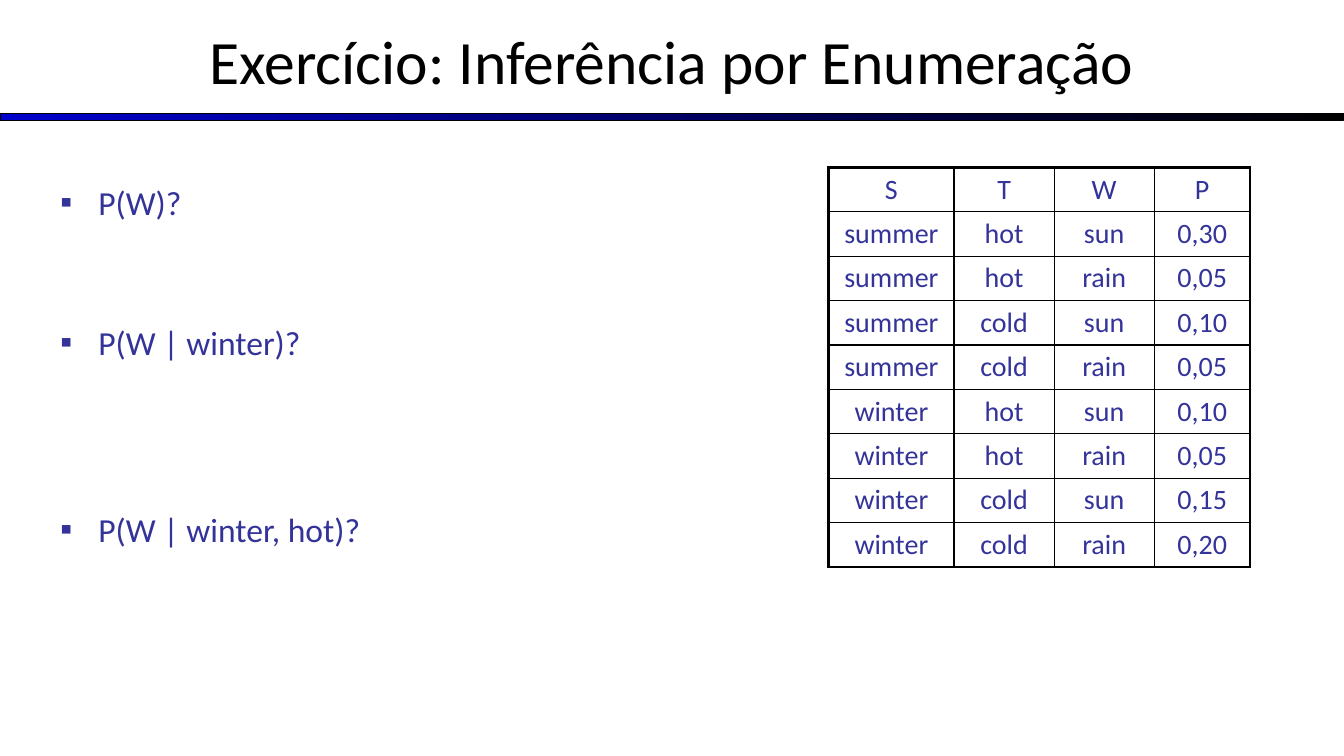
from dataclasses import dataclass

from lxml.etree import SubElement
from pptx import Presentation
from pptx.dml.color import RGBColor
from pptx.enum.shapes import MSO_SHAPE as Preset
from pptx.enum.text import MSO_ANCHOR as Anchor, MSO_AUTO_SIZE as AutoSize, PP_ALIGN as Align
from pptx.oxml.ns import qn
from pptx.util import Pt


@dataclass(frozen=True)
class Theme:
    font: str = "Calibri"
    ink: str = "000000"
    text: str = "333399"
    bar_start: str = "0000CC"
    title_size: int = 44
    list_size: int = 24
    table_size: int = 20
    thin: float = 1
    thick: float = 2.25


THEME = Theme()
QUESTIONS = [("P(W)?", 0), ("P(W | winter)?", 71.4), ("P(W | winter, hot)?", 105)]
COLUMN_WIDTHS = [89.5, 71.5, 71.5, 68.5]
ROW_HEIGHT = 31.2
DISTRIBUTION = [
    ("S", "T", "W", "P"),
    ("summer", "hot", "sun", "0,30"),
    ("summer", "hot", "rain", "0,05"),
    ("summer", "cold", "sun", "0,10"),
    ("summer", "cold", "rain", "0,05"),
    ("winter", "hot", "sun", "0,10"),
    ("winter", "hot", "rain", "0,05"),
    ("winter", "cold", "sun", "0,15"),
    ("winter", "cold", "rain", "0,20"),
]


def place(shape, left, top, width, height):
    shape.left, shape.top = Pt(left), Pt(top)
    shape.width, shape.height = Pt(width), Pt(height)


def style_para(para, size, color, align):
    para.alignment = align
    for span in para.runs:
        span.font.name = THEME.font
        span.font.size = Pt(size)
        span.font.color.rgb = RGBColor.from_string(color)


def add_title(page, text):
    title = page.shapes.title
    place(title, 0, -2, 960, 90)
    frame = title.text_frame
    frame.text = text
    frame.vertical_anchor = Anchor.MIDDLE
    frame.auto_size = AutoSize.NONE
    style_para(frame.paragraphs[0], THEME.title_size, THEME.ink, Align.CENTER)


def add_bar(page):
    bar = page.shapes.add_shape(Preset.RECTANGLE, 0, Pt(81), Pt(960), Pt(5))
    bar.shadow.inherit = False
    bar.fill.gradient()
    bar.fill.gradient_angle = 0
    for stop, color in zip(bar.fill.gradient_stops, (THEME.bar_start, THEME.ink)):
        stop.color.rgb = RGBColor.from_string(color)
    bar.line.color.rgb = RGBColor.from_string(THEME.ink)
    bar.line.width = Pt(0.75)


def add_bullet(para):
    props = para._p.get_or_add_pPr()
    props.set("marL", str(Pt(27)))
    props.set("indent", str(Pt(-27)))
    color = SubElement(props, qn("a:buClr"))
    SubElement(color, qn("a:srgbClr"), val=THEME.text)
    SubElement(props, qn("a:buFont"), typeface=THEME.font)
    SubElement(props, qn("a:buChar"), char="▪")


def add_questions(page):
    body = page.placeholders[1]
    place(body, 36, 126, 318, 356.5)
    frame = body.text_frame
    frame.text = "\n".join(text for text, gap in QUESTIONS)
    frame.auto_size = AutoSize.NONE
    for para, (text, gap) in zip(frame.paragraphs, QUESTIONS):
        para.space_before = Pt(gap)
        add_bullet(para)
        style_para(para, THEME.list_size, THEME.text, Align.LEFT)


def set_borders(cell, outer_sides):
    props = cell._tc.get_or_add_tcPr()
    for side in "LRTB":
        width = THEME.thick if side in outer_sides else THEME.thin
        line = SubElement(props, qn(f"a:ln{side}"), w=str(Pt(width)))
        fill = SubElement(line, qn("a:solidFill"))
        SubElement(fill, qn("a:srgbClr"), val=THEME.ink)


def add_distribution(page):
    row_count, column_count = len(DISTRIBUTION), len(COLUMN_WIDTHS)
    table = page.shapes.add_table(
        row_count, column_count, Pt(592), Pt(119.5),
        Pt(sum(COLUMN_WIDTHS)), Pt(ROW_HEIGHT * row_count),
    ).table
    table.first_row = table.horz_banding = False
    for column, width in zip(table.columns, COLUMN_WIDTHS):
        column.width = Pt(width)
    for r, values in enumerate(DISTRIBUTION):
        table.rows[r].height = Pt(ROW_HEIGHT)
        for c, value in enumerate(values):
            cell = table.cell(r, c)
            cell.text = value
            style_para(cell.text_frame.paragraphs[0], THEME.table_size, THEME.text, Align.CENTER)
            edges = {"L": c == 0, "R": c == column_count - 1, "T": r == 0, "B": r == row_count - 1}
            set_borders(cell, [side for side, outer in edges.items() if outer])
            cell.fill.background()


def main():
    deck = Presentation()
    deck.slide_width, deck.slide_height = Pt(960), Pt(540)
    page = deck.slides.add_slide(deck.slide_layouts[1])
    add_bar(page)
    add_title(page, "Exercício: Inferência por Enumeração")
    add_questions(page)
    add_distribution(page)
    deck.save("out.pptx")


if __name__ == "__main__":
    main()
